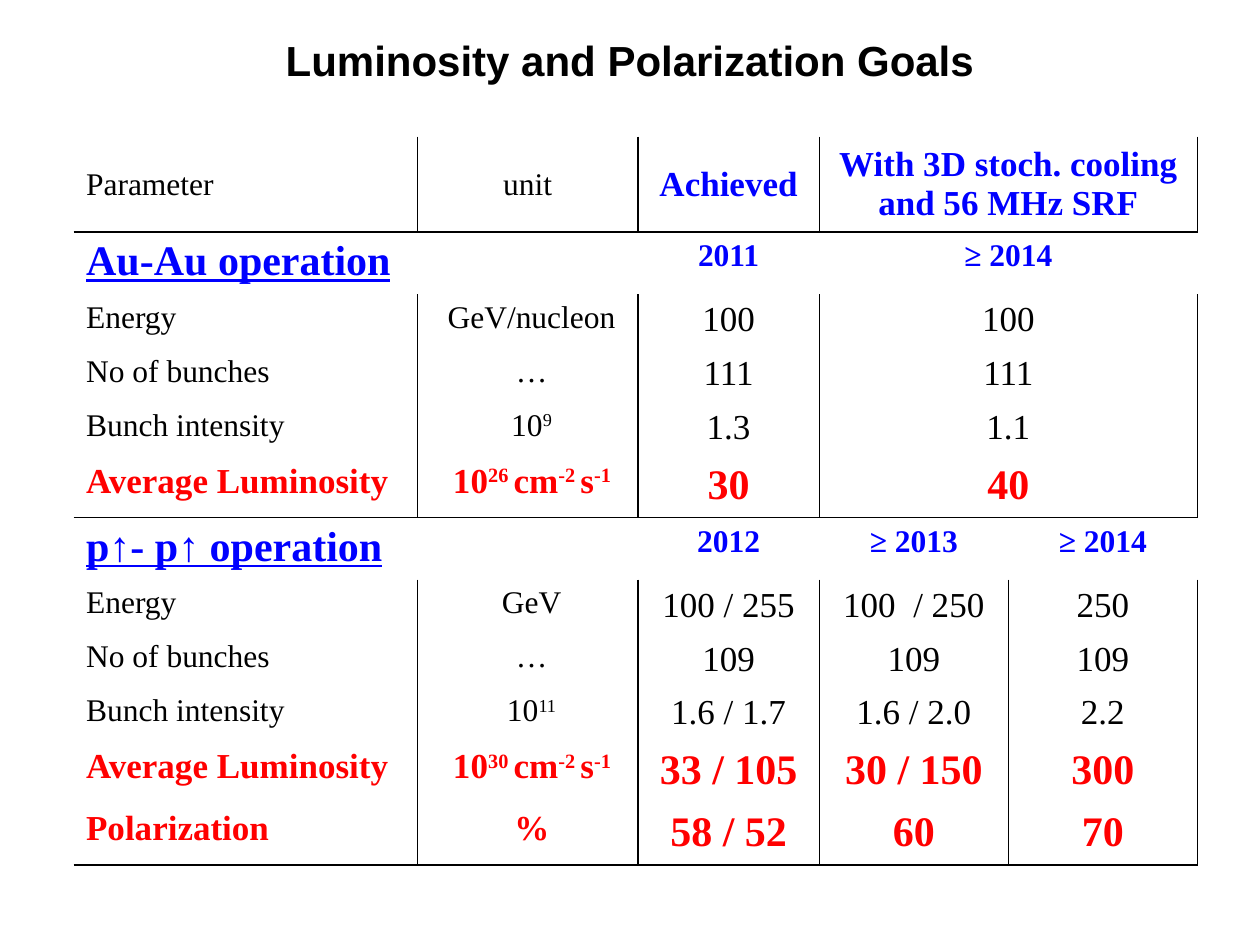
from pptx import Presentation
from pptx.dml.color import RGBColor
from pptx.enum.text import MSO_ANCHOR as Anchor, PP_ALIGN as Align
from pptx.oxml import parse_xml
from pptx.oxml.ns import nsdecls
from pptx.util import Pt

BLACK = RGBColor(0x00, 0x00, 0x00)
BLUE = RGBColor(0x00, 0x00, 0xFF)
RED = RGBColor(0xFF, 0x00, 0x00)
NO_STYLE = "{2D5ABB26-0587-4C30-8999-92F81FD0307C}"

COLUMN_WIDTHS = [196.5, 126, 103.7, 108, 108]
ROW_HEIGHTS = {"header": 54.7, "section": 35.4, "data": 30.8, "goal": 35.4}
LAST_COLUMN = len(COLUMN_WIDTHS) - 1

# Row kind and cell texts; None joins a cell to the one on its left,
# and text between carets is superscript.
ROWS = [
    ("header", ["Parameter", "unit", "Achieved",
                "With 3D stoch. cooling and 56 MHz SRF", None]),
    ("section", ["Au-Au operation", None, "2011", "≥ 2014", None]),
    ("data", ["Energy", " GeV/nucleon", "100", "100", None]),
    ("data", ["No of bunches", " …", "111", "111", None]),
    ("data", ["Bunch intensity", " 10^9", "1.3", "1.1", None]),
    ("goal", ["Average Luminosity", " 10^26 ^cm^-2 ^s^-1", "30", "40", None]),
    ("section", ["p↑- p↑ operation", None, "2012", "≥ 2013", "≥ 2014"]),
    ("data", ["Energy", " GeV", "100 / 255", "100  / 250", "250"]),
    ("data", ["No of bunches", " …", "109", "109", "109"]),
    ("data", ["Bunch intensity", " 10^11", "1.6 / 1.7", "1.6 / 2.0", "2.2"]),
    ("goal", ["Average Luminosity", " 10^30 ^cm^-2 ^s^-1",
              "33 / 105", "30 / 150", "300"]),
    ("goal", ["Polarization", " %", "58 / 52", "60", "70"]),
]
RULED_ROWS = {0, 5, len(ROWS) - 1}


def write_text(frame, text, font="Times New Roman", size=18, color=BLACK,
               bold=False, underline=False, align=Align.LEFT):
    """Write one paragraph, with every second part between carets raised."""
    para = frame.paragraphs[0]
    para.alignment = align
    for index, part in enumerate(text.split("^")):
        span = para.add_run()
        span.text = part
        span.font.name = font
        span.font.size = Pt(size)
        span.font.bold = bold
        span.font.underline = underline
        span.font.color.rgb = color
        if index % 2:
            span.font._element.set("baseline", "30000")


def text_format(kind, column):
    is_value = column >= 2
    if kind == "header":
        return dict(size=20, color=BLUE, bold=True) if is_value else {}
    if kind == "section":
        return dict(size=18 if is_value else 24, color=BLUE, bold=True,
                    underline=not is_value)
    if kind == "goal":
        return dict(size=24 if is_value else 20, color=RED, bold=True)
    return dict(size=20 if is_value else 18)


def set_borders(cell, right, bottom):
    properties = cell._tc.get_or_add_tcPr()
    shown = {"lnL": False, "lnR": right, "lnT": False, "lnB": bottom}
    for side, visible in shown.items():
        if visible:
            properties.append(parse_xml(
                f'<a:{side} {nsdecls("a")} w="{Pt(1)}"><a:solidFill>'
                f'<a:srgbClr val="{BLACK}"/></a:solidFill></a:{side}>'))


def add_title(page, text):
    title = page.shapes.title
    title.left, title.top = Pt(30), Pt(18)
    title.width, title.height = Pt(660), Pt(32.4)
    title.text_frame.vertical_anchor = Anchor.MIDDLE
    write_text(title.text_frame, text, font="Arial", size=24, bold=True,
               align=Align.CENTER)


def fill_row(table, row, kind, texts):
    for column, text in enumerate(texts):
        cell = table.cell(row, column)
        set_borders(cell, right=kind != "section", bottom=row in RULED_ROWS)
        cell.fill.background()
        if text is None:
            table.cell(row, column - 1).merge(cell)
            continue
        cell.vertical_anchor = Anchor.MIDDLE if kind == "header" else Anchor.TOP
        write_text(cell.text_frame, text,
                   align=Align.CENTER if column else Align.LEFT,
                   **text_format(kind, column))


def add_goal_table(page):
    heights = [ROW_HEIGHTS[kind] for kind, _ in ROWS]
    frame = page.shapes.add_table(
        len(ROWS), len(COLUMN_WIDTHS), Pt(42), Pt(78),
        Pt(sum(COLUMN_WIDTHS)), Pt(sum(heights)))
    table = frame.table
    table.first_row = table.horz_banding = False
    table._tbl.tblPr[0].text = NO_STYLE
    for column, width in zip(table.columns, COLUMN_WIDTHS):
        column.width = Pt(width)
    for row, height in zip(table.rows, heights):
        row.height = Pt(height)
    for row, (kind, texts) in enumerate(ROWS):
        fill_row(table, row, kind, texts)


def main():
    deck = Presentation()
    deck.slide_width, deck.slide_height = Pt(720), Pt(540)
    page = deck.slides.add_slide(deck.slide_layouts[5])
    add_title(page, "Luminosity and Polarization Goals")
    add_goal_table(page)
    deck.save("out.pptx")


if __name__ == "__main__":
    main()
